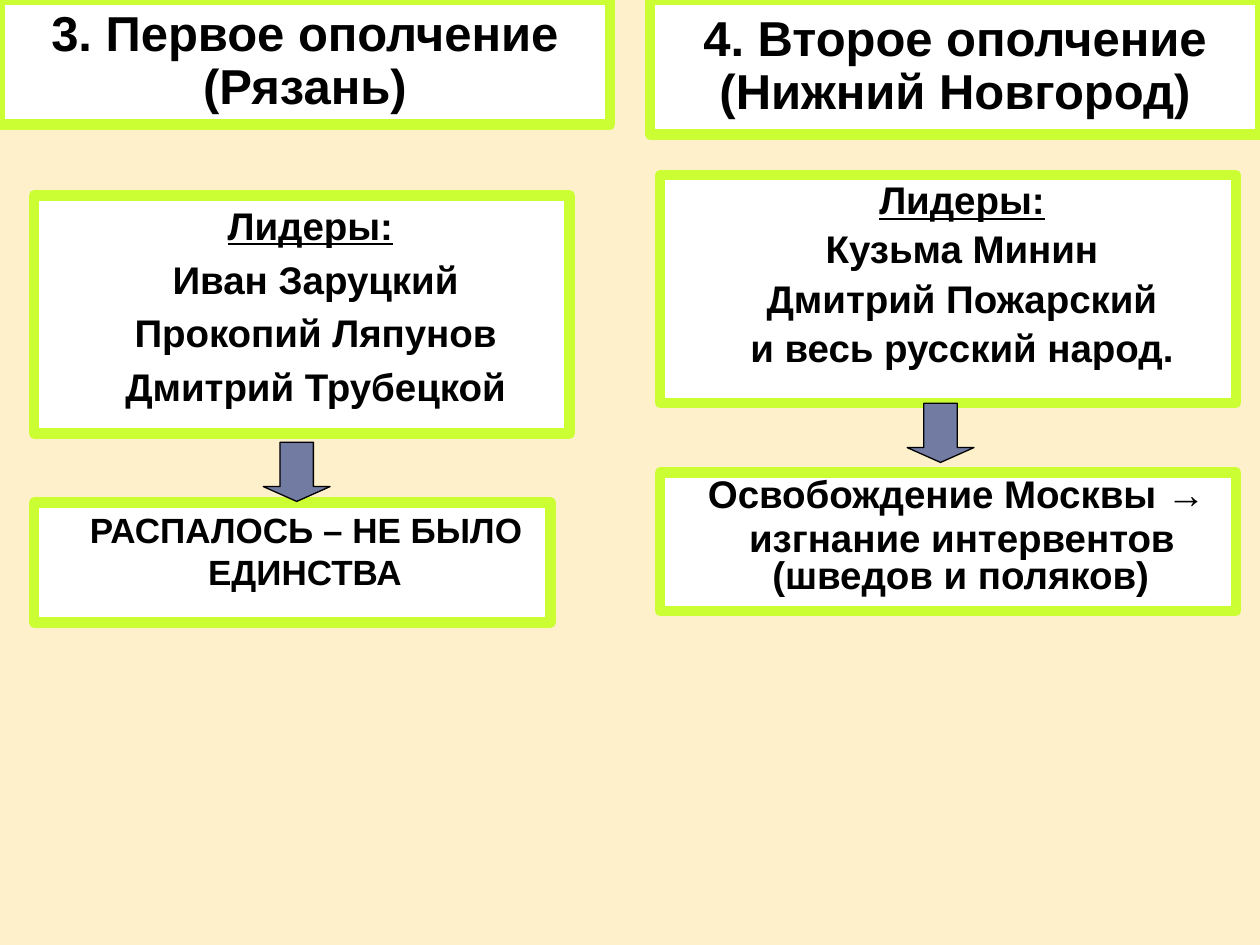
from dataclasses import dataclass
from typing import Optional

from lxml.etree import SubElement
from pptx import Presentation
from pptx.dml.color import RGBColor
from pptx.enum.shapes import MSO_SHAPE as Preset
from pptx.enum.text import MSO_ANCHOR as Anchor, MSO_AUTO_SIZE as AutoSize, PP_ALIGN as Align
from pptx.oxml.ns import qn
from pptx.util import Inches, Pt

COLORS = {
    "background": "FDF0CA",
    "panel": "FFFFFF",
    "border": "CCFF33",
    "arrow": "727CA3",
    "ink": "000000",
}
FONT = "Arial"
SLIDE_WIDTH, SLIDE_HEIGHT = Inches(10), Inches(7.5)
LEFT_COLUMN, RIGHT_COLUMN = 2.7, 52.4
HEADER_WIDTH, RIGHT_WIDTH = 48.4, 45.7
ARROW_WIDTH, ARROW_HEIGHT = 5.3, 6.27


@dataclass(frozen=True)
class Area:
    left: float
    top: float
    width: float
    height: float


@dataclass(frozen=True)
class Run:
    text: str
    underline: bool = False


@dataclass(frozen=True)
class Panel:
    area: Area
    paragraphs: tuple[tuple[Run, ...], ...]
    size: int = 22
    line_spacing: Optional[float] = None
    header: bool = False
    placeholder: Optional[int] = None


def lines(*texts: str) -> tuple[tuple[Run, ...], ...]:
    return tuple((Run(text),) for text in texts)


FIRST_HEADER = Panel(
    Area(0, 0, HEADER_WIDTH, 13.2),
    lines("3. Первое ополчение\n(Рязань)"),
    28, 0.9, True, 0,
)
SECOND_HEADER = Panel(
    Area(100 - HEADER_WIDTH, 0, HEADER_WIDTH, 14.27),
    lines("4. Второе ополчение", "(Нижний Новгород)"),
    28, 0.9, True,
)
FIRST_LEADERS = Panel(
    Area(LEFT_COLUMN, 20.67, 42.5, 25.2),
    ((Run("Лидеры:", True), Run(" ")),)
    + lines("Иван Заруцкий", "Прокопий Ляпунов", "Дмитрий Трубецкой"),
    placeholder=1,
)
SECOND_LEADERS = Panel(
    Area(RIGHT_COLUMN, 18.53, RIGHT_WIDTH, 24.13),
    ((Run("Лидеры:", True),),)
    + lines("Кузьма Минин", "Дмитрий Пожарский", "и весь русский народ."),
    line_spacing=0.9,
)
FIRST_RESULT = Panel(
    Area(LEFT_COLUMN, 53.2, 41, 12.67),
    lines("РАСПАЛОСЬ – НЕ БЫЛО ЕДИНСТВА"),
    size=20,
)
SECOND_RESULT = Panel(
    Area(RIGHT_COLUMN, 50, RIGHT_WIDTH, 14.67),
    lines("Освобождение Москвы → ", "изгнание интервентов (шведов и поляков)"),
    line_spacing=0.8,
)
ARROWS = (
    Area(72, 42.67, ARROW_WIDTH, ARROW_HEIGHT),
    Area(20.9, 46.8, ARROW_WIDTH, ARROW_HEIGHT),
)


def color(name: str) -> RGBColor:
    return RGBColor.from_string(COLORS[name])


def bounds(area: Area) -> tuple[int, int, int, int]:
    return (
        round(SLIDE_WIDTH * area.left / 100),
        round(SLIDE_HEIGHT * area.top / 100),
        round(SLIDE_WIDTH * area.width / 100),
        round(SLIDE_HEIGHT * area.height / 100),
    )


def paint(shape, fill: str, line: str, width: float) -> None:
    shape.fill.solid()
    shape.fill.fore_color.rgb = color(fill)
    shape.line.color.rgb = color(line)
    shape.line.width = Pt(width)


def format_paragraph(paragraph, panel: Panel) -> None:
    properties = paragraph._p.get_or_add_pPr()
    properties.set("marL", str(0 if panel.header else Inches(0.2)))
    properties.set("indent", str(0 if panel.header else Inches(0.02)))
    space_before = SubElement(properties, qn("a:spcBef"))
    SubElement(space_before, qn("a:spcPct")).set("val", "0" if panel.header else "20000")
    SubElement(properties, qn("a:buNone"))
    paragraph.alignment = Align.CENTER
    if panel.line_spacing:
        paragraph.line_spacing = panel.line_spacing


def add_run(paragraph, text: str, size: int, underline: bool) -> None:
    run = paragraph.add_run()
    run.text = text
    run.font.name = FONT
    run.font.size = Pt(size)
    run.font.bold = True
    run.font.underline = underline
    run.font.color.rgb = color("ink")


def draw_panel(slide, panel: Panel) -> None:
    if panel.placeholder is None:
        shape = slide.shapes.add_shape(Preset.RECTANGLE, *bounds(panel.area))
        shape.shadow.inherit = False
    else:
        shape = slide.placeholders[panel.placeholder]
        shape.left, shape.top, shape.width, shape.height = bounds(panel.area)
    paint(shape, "panel", "border", 6)
    frame = shape.text_frame
    frame.word_wrap = True
    frame.auto_size = AutoSize.NONE
    frame.vertical_anchor = Anchor.MIDDLE if panel.header else Anchor.TOP
    for index, runs in enumerate(panel.paragraphs):
        paragraph = frame.add_paragraph() if index else frame.paragraphs[0]
        format_paragraph(paragraph, panel)
        for run in runs:
            for part, text in enumerate(run.text.split("\n")):
                if part:
                    paragraph.add_line_break()
                add_run(paragraph, text, panel.size, run.underline)


def draw_arrow(slide, area: Area) -> None:
    arrow = slide.shapes.add_shape(Preset.DOWN_ARROW, *bounds(area))
    arrow.shadow.inherit = False
    arrow.adjustments[0] = 0.5
    arrow.adjustments[1] = 0.25
    paint(arrow, "arrow", "ink", 0.75)


def main() -> None:
    presentation = Presentation()
    presentation.slide_width, presentation.slide_height = SLIDE_WIDTH, SLIDE_HEIGHT
    slide = presentation.slides.add_slide(presentation.slide_layouts[1])
    slide.background.fill.solid()
    slide.background.fill.fore_color.rgb = color("background")
    for panel in (FIRST_HEADER, FIRST_LEADERS, SECOND_LEADERS, FIRST_RESULT, SECOND_RESULT):
        draw_panel(slide, panel)
    for area in ARROWS:
        draw_arrow(slide, area)
    draw_panel(slide, SECOND_HEADER)
    presentation.save("out.pptx")


if __name__ == "__main__":
    main()
